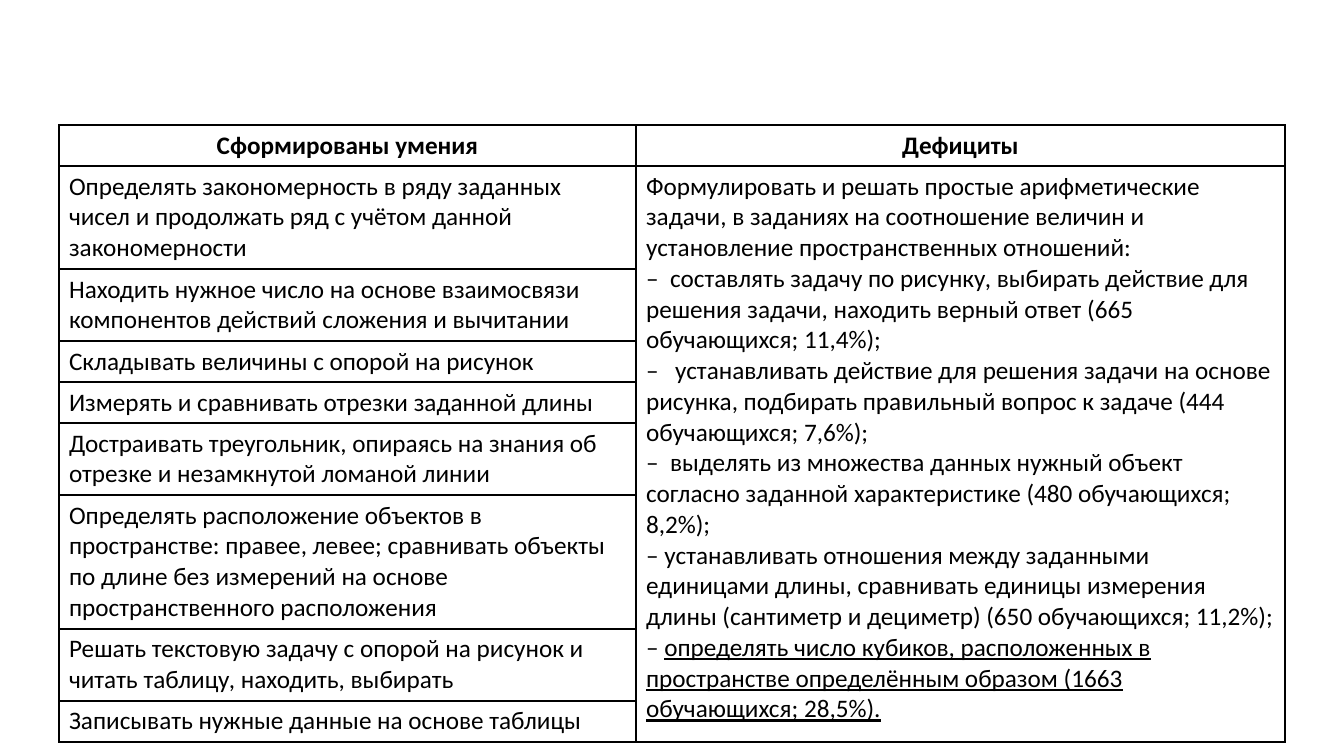
from dataclasses import dataclass

import lxml.etree
import pptx
import pptx.dml.color
import pptx.enum.text
import pptx.oxml.ns
import pptx.util

EMU_PER_PX = 914400 / 100.8
SLIDE_SIZE = (1344, 756)
TABLE_ORIGIN = (59, 125)
COLUMN_WIDTHS = (577, 649)
LINE_HEIGHT, CELL_PADDING = 31, 10
BLACK = "000000"
BODY_FORMAT = {"name": "Calibri", "size": pptx.util.Pt(18), "bold": False}
HEADER_FORMAT = BODY_FORMAT | {"bold": True}


@dataclass
class Skill:
    text: str
    lines: int


@dataclass
class Deficit:
    text: str
    dash: str = ""
    tab: int = 0
    underline: bool = False


HEADERS = ("Сформированы умения", "Дефициты")
SKILLS = (
    Skill("Определять закономерность в ряду заданных чисел и продолжать ряд "
          "с учётом данной закономерности", 3),
    Skill("Находить нужное число на основе взаимосвязи компонентов действий "
          "сложения и вычитании", 2),
    Skill("Складывать величины с опорой на рисунок", 1),
    Skill("Измерять и сравнивать отрезки заданной длины", 1),
    Skill("Достраивать треугольник, опираясь на знания об отрезке и "
          "незамкнутой ломаной линии", 2),
    Skill("Определять расположение объектов в пространстве: правее, левее; "
          "сравнивать объекты по длине без измерений на основе "
          "пространственного расположения", 4),
    Skill("Решать текстовую задачу с опорой на рисунок и читать таблицу, "
          "находить, выбирать", 2),
    Skill("Записывать нужные данные на основе таблицы", 1),
)
DEFICITS = (
    Deficit("Формулировать и решать простые арифметические задачи, в заданиях "
            "на соотношение величин и установление пространственных отношений:"),
    Deficit("составлять задачу по рисунку, выбирать действие для решения "
            "задачи, находить верный ответ (665 обучающихся; 11,4%);", "–\t", 24),
    Deficit("устанавливать действие для решения задачи на основе рисунка, "
            "подбирать правильный вопрос к задаче (444 обучающихся; 7,6%);",
            "–\t", 29),
    Deficit("выделять из множества данных нужный объект согласно заданной "
            "характеристике (480 обучающихся; 8,2%);", "–\t", 24),
    Deficit("устанавливать отношения между заданными единицами длины, "
            "сравнивать единицы измерения длины (сантиметр и дециметр) "
            "(650 обучающихся; 11,2%);", "– "),
    Deficit("определять число кубиков, расположенных в пространстве "
            "определённым образом (1663 обучающихся; 28,5%).", "– ",
            underline=True),
)


def px(length: int) -> pptx.util.Emu:
    return pptx.util.Emu(round(length * EMU_PER_PX))


def color(value: str) -> pptx.dml.color.RGBColor:
    return pptx.dml.color.RGBColor.from_string(value)


def add_child(parent, tag: str, **attributes: str):
    return lxml.etree.SubElement(parent, pptx.oxml.ns.qn(tag), attributes)


def add_run(paragraph, text: str, font_format: dict) -> None:
    run = paragraph.add_run()
    run.text = text
    for name, value in font_format.items():
        setattr(run.font, name, value)
    run.font.color.rgb = color(BLACK)


def add_tab_stop(paragraph, position: int) -> None:
    properties = paragraph._p.get_or_add_pPr()
    stops = add_child(properties, "a:tabLst")
    add_child(stops, "a:tab", pos=str(px(position)), algn="l")


def style_cell(cell) -> None:
    properties = cell._tc.get_or_add_tcPr()
    for side in ("a:lnL", "a:lnR", "a:lnT", "a:lnB"):
        line = add_child(properties, side, w=str(pptx.util.Pt(1)))
        fill = add_child(line, "a:solidFill")
        add_child(fill, "a:srgbClr", val=BLACK)
    cell.fill.background()


def fill_deficits(cell) -> None:
    for index, deficit in enumerate(DEFICITS):
        frame = cell.text_frame
        paragraph = frame.add_paragraph() if index else frame.paragraphs[0]
        if deficit.tab:
            add_tab_stop(paragraph, deficit.tab)
        if deficit.dash:
            add_run(paragraph, deficit.dash, BODY_FORMAT)
        add_run(paragraph, deficit.text,
                BODY_FORMAT | {"underline": deficit.underline})


def add_skills_table(slide) -> None:
    line_counts = [1] + [skill.lines for skill in SKILLS]
    heights = [count * LINE_HEIGHT + CELL_PADDING for count in line_counts]
    shape = slide.shapes.add_table(
        len(heights), len(COLUMN_WIDTHS), *map(px, TABLE_ORIGIN),
        px(sum(COLUMN_WIDTHS)), px(sum(heights)))
    table = shape.table
    table.first_row = table.horz_banding = False
    for column, width in zip(table.columns, COLUMN_WIDTHS):
        column.width = px(width)
    for row, height in zip(table.rows, heights):
        row.height = px(height)
    for cell in table.iter_cells():
        style_cell(cell)

    # Header row
    for index, header in enumerate(HEADERS):
        paragraph = table.cell(0, index).text_frame.paragraphs[0]
        paragraph.alignment = pptx.enum.text.PP_ALIGN.CENTER
        add_run(paragraph, header, HEADER_FORMAT)

    # Skills, one per row
    for index, skill in enumerate(SKILLS, start=1):
        paragraph = table.cell(index, 0).text_frame.paragraphs[0]
        add_run(paragraph, skill.text, BODY_FORMAT)

    # Deficits, one tall cell
    deficits_cell = table.cell(1, 1)
    deficits_cell.merge(table.cell(len(SKILLS), 1))
    fill_deficits(deficits_cell)


def main() -> None:
    presentation = pptx.Presentation()
    presentation.slide_width, presentation.slide_height = map(px, SLIDE_SIZE)
    slide = presentation.slides.add_slide(presentation.slide_layouts[6])
    add_skills_table(slide)
    presentation.save("out.pptx")


if __name__ == "__main__":
    main()
